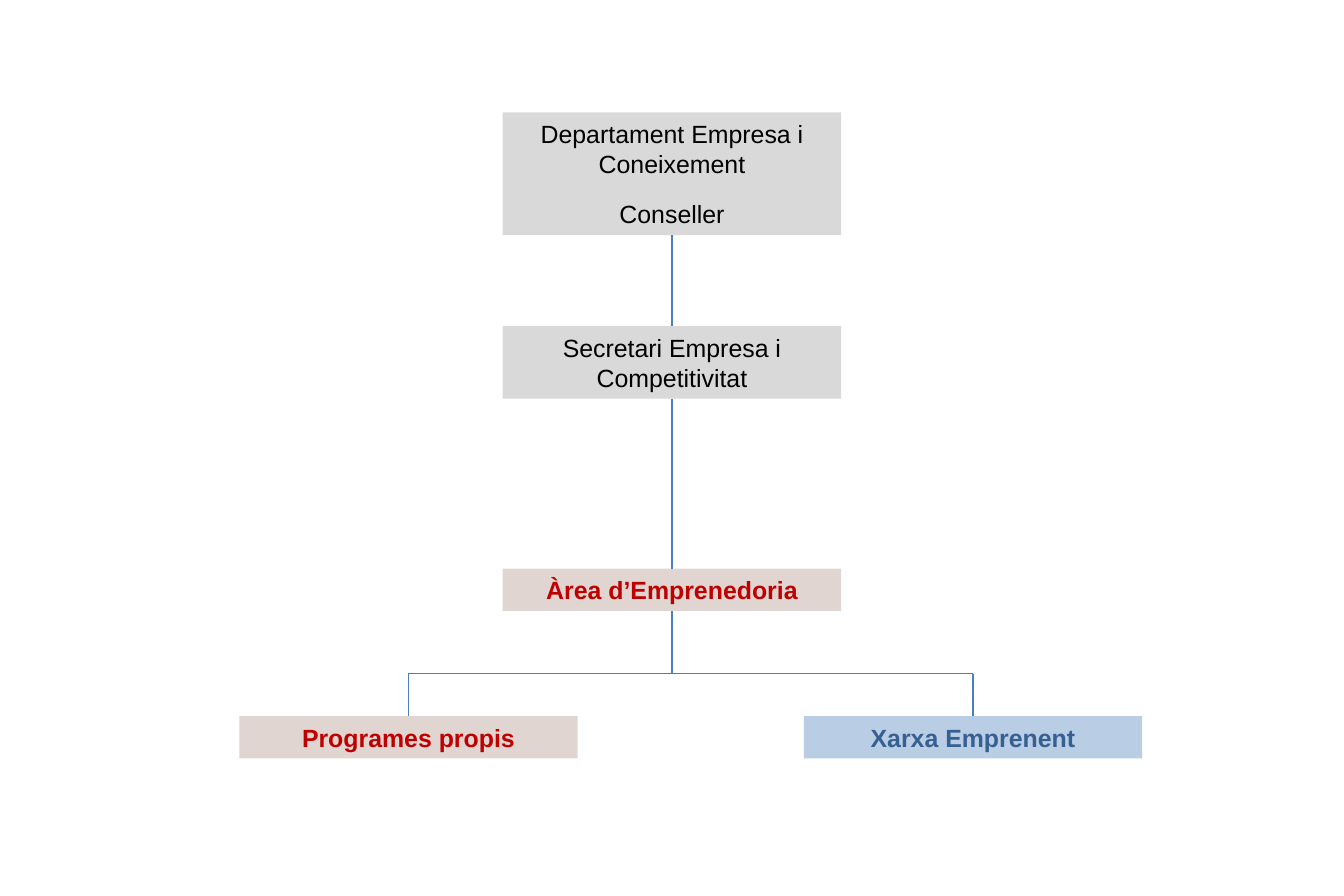
import pptx
import pptx.dml.color
import pptx.enum.shapes
import pptx.enum.text
import pptx.oxml.ns
import pptx.util
from lxml import etree

Pt = pptx.util.Pt

COLORS = {
    "grey": "D9D9D9", "beige": "E1D5D1", "light_blue": "B9CDE5",
    "black": "000000", "red": "C00000", "dark_blue": "376092", "line": "4B7EBC",
}
SLIDE_WIDTH, SLIDE_HEIGHT = 810, 540
BOX_WIDTH = 204
MIDDLE, LEFT, RIGHT = 405, 246.2, 586.4
BRANCH_TOP = 406.1

# key: (paragraphs, centre x, top, height, fill, text colour, bold)
BOXES = {
    "department": (["Departament Empresa i Coneixement", "Conseller"],
                   MIDDLE, 67.7, 74, "grey", "black", False),
    "secretary": (["Secretari Empresa i Competitivitat"],
                  MIDDLE, 196.6, 43.7, "grey", "black", False),
    "area": (["Àrea d’Emprenedoria"], MIDDLE, 342.8, 25.4, "beige", "red", True),
    "programmes": (["Programes propis"], LEFT, 431.7, 25.4, "beige", "red", True),
    "network": (["Xarxa Emprenent"], RIGHT, 431.7, 25.4, "light_blue", "dark_blue", True),
}
CHAIN = ["department", "secretary", "area"]
BRANCHES = ["programmes", "network"]
TOP_SIDE, BOTTOM_SIDE = 0, 2


def color(name):
    return pptx.dml.color.RGBColor.from_string(COLORS[name])


def write_text(shape, paragraphs, *, text_color, bold=False, size=15, font="Arial"):
    frame = shape.text_frame
    frame.word_wrap = True
    frame.auto_size = pptx.enum.text.MSO_AUTO_SIZE.SHAPE_TO_FIT_TEXT
    frame.vertical_anchor = pptx.enum.text.MSO_ANCHOR.MIDDLE
    for index, text in enumerate(paragraphs):
        paragraph = frame.add_paragraph() if index else frame.paragraphs[0]
        paragraph.alignment = pptx.enum.text.PP_ALIGN.CENTER
        paragraph.space_before = Pt(12)
        run = paragraph.add_run()
        run.text = text
        run.font.name = font
        run.font.size = Pt(size)
        run.font.bold = bold
        run.font.color.rgb = color(text_color)


def add_box(slide, paragraphs, center, top, height, fill, text_color, bold):
    shape = slide.shapes.add_shape(
        pptx.enum.shapes.MSO_SHAPE.RECTANGLE,
        Pt(center - BOX_WIDTH / 2), Pt(top), Pt(BOX_WIDTH), Pt(height))
    shape.shadow.inherit = False
    shape.fill.solid()
    shape.fill.fore_color.rgb = color(fill)
    shape.line.fill.background()
    write_text(shape, paragraphs, text_color=text_color, bold=bold)
    return shape


def add_line(slide, start, end, start_box=None, end_box=None):
    """Draw a line; a given box is joined at its bottom (start) or top (end)."""
    connector = slide.shapes.add_connector(
        pptx.enum.shapes.MSO_CONNECTOR.STRAIGHT,
        Pt(start[0]), Pt(start[1]), Pt(end[0]), Pt(end[1]))
    connector.line.color.rgb = color("line")
    connector.line.width = Pt(0.75)
    properties = connector._element.spPr
    etree.SubElement(properties, pptx.oxml.ns.qn("a:effectLst"))
    if start_box is not None:
        connector.begin_connect(start_box, BOTTOM_SIDE)
    if end_box is not None:
        connector.end_connect(end_box, TOP_SIDE)


def top_point(key):
    return BOXES[key][1], BOXES[key][2]


def bottom_point(key):
    return BOXES[key][1], BOXES[key][2] + BOXES[key][3]


def main():
    presentation = pptx.Presentation()
    presentation.slide_width = Pt(SLIDE_WIDTH)
    presentation.slide_height = Pt(SLIDE_HEIGHT)
    slide = presentation.slides.add_slide(presentation.slide_layouts[6])

    shapes = {key: add_box(slide, *box) for key, box in BOXES.items()}
    for upper, lower in zip(CHAIN, CHAIN[1:]):
        add_line(slide, bottom_point(upper), top_point(lower), shapes[upper], shapes[lower])
    add_line(slide, bottom_point("area"), (MIDDLE, BRANCH_TOP), start_box=shapes["area"])
    add_line(slide, (LEFT, BRANCH_TOP), (RIGHT, BRANCH_TOP))
    for key in BRANCHES:
        add_line(slide, (BOXES[key][1], BRANCH_TOP), top_point(key), end_box=shapes[key])

    presentation.save("out.pptx")


if __name__ == "__main__":
    main()
